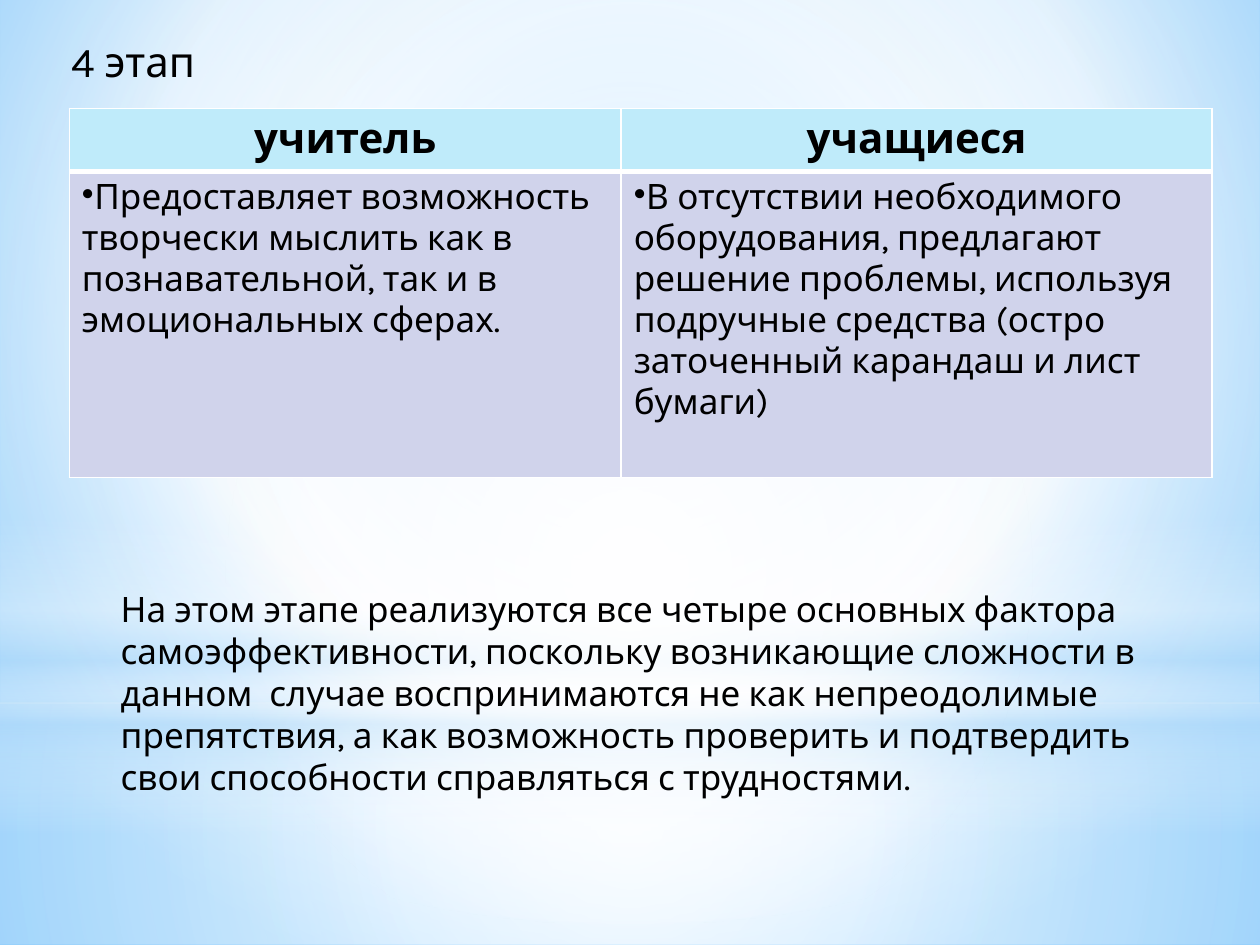
import pptx
import pptx.util
import pptx.oxml
import pptx.oxml.ns
import pptx.dml.color
import pptx.enum.shapes
import pptx.enum.text

Inches = pptx.util.Inches
Shape = pptx.enum.shapes.MSO_SHAPE
Align = pptx.enum.text.PP_ALIGN
NS = pptx.oxml.ns.nsdecls("a")
GRADIENT = pptx.oxml.ns.qn("a:gradFill")
BODY = {"size": pptx.util.Pt(20), "bold": False}
TITLE = {"size": pptx.util.Pt(24), "bold": False}
HEADER = {"size": pptx.util.Pt(24), "bold": True}
CENTRE = (50, 50, 50, 50)


def rgb(value):
    return pptx.dml.color.RGBColor.from_string(value)


def set_gradient(owner, element, stops, focus=None):
    owner.fill.gradient()
    items = "".join(
        f'<a:gs pos="{pos * 1000}"><a:srgbClr val="{color}">'
        f'<a:alpha val="{alpha * 1000}"/></a:srgbClr></a:gs>'
        for pos, color, alpha in stops)
    if focus:
        l, t, r, b = (edge * 1000 for edge in focus)
        direction = (f'<a:path path="circle"><a:fillToRect l="{l}" t="{t}" '
                     f'r="{r}" b="{b}"/></a:path>')
    else:
        direction = '<a:lin ang="5400000" scaled="0"/>'
    old = next(element.iter(GRADIENT))
    old.getparent().replace(old, pptx.oxml.parse_xml(
        f'<a:gradFill {NS} rotWithShape="1"><a:gsLst>{items}</a:gsLst>{direction}</a:gradFill>'))


def add_glow(s, kind, box, stops, focus=None):
    sp = s.shapes.add_shape(kind, *map(Inches, box))
    sp.shadow.inherit = False
    sp.line.fill.background()
    set_gradient(sp, sp._element, stops, focus)


def add_backdrop(s, width, height):
    set_gradient(s.background, s._element,
                 [(0, "9ED5FF", 100), (60, "FFFFFF", 100), (100, "5BB9FF", 100)],
                 (20, 10, 20, 60))
    horizon = 5.58
    add_glow(s, Shape.RECTANGLE, (0, horizon, width, height - horizon),
             [(0, "FFFFFF", 91), (37, "FFFFFF", 76), (100, "B4DCFA", 79)], CENTRE)
    add_glow(s, Shape.RECTANGLE, (0, 0, width, horizon),
             [(0, "FFFFFF", 89), (48, "FFFFFF", 62), (100, "B4DCFA", 79)], CENTRE)
    add_glow(s, Shape.RECTANGLE, (0, 4.12, width, 2.5),
             [(0, "FFFFFF", 0), (29, "FFFFFF", 30), (45, "B4DCFA", 40),
              (55, "FFFFFF", 26), (65, "B4DCFA", 60), (100, "FFFFFF", 0)])
    add_glow(s, Shape.OVAL, (0, 1.75, width, horizon),
             [(0, "FFFFFF", 100), (56, "FFFFFF", 0)], CENTRE)


def write(tf, text, style):
    p = tf.paragraphs[0]
    r = p.add_run()
    r.text = text
    for name, value in {"name": "Karla", **style}.items():
        setattr(r.font, name, value)
    r.font.color.rgb = rgb("000000")
    return p


def add_text(s, box, text, style):
    tf = s.shapes.add_textbox(*map(Inches, box)).text_frame
    tf.word_wrap = True
    tf.auto_size = pptx.enum.text.MSO_AUTO_SIZE.SHAPE_TO_FIT_TEXT
    write(tf, text, style)


def format_cell(cell, color, bottom):
    tcPr = cell._tc.get_or_add_tcPr()
    for side, weight in {"L": 1, "R": 1, "T": 1, "B": bottom}.items():
        tcPr.append(pptx.oxml.parse_xml(
            f'<a:ln{side} {NS} w="{pptx.util.Pt(weight)}"><a:solidFill>'
            f'<a:srgbClr val="FFFFFF"/></a:solidFill></a:ln{side}>'))
    cell.fill.solid()
    cell.fill.fore_color.rgb = rgb(color)


def add_roles_table(s, box, widths, heights, columns):
    table = s.shapes.add_table(2, len(columns), *map(Inches, box)).table
    for row, height in zip(table.rows, heights):
        row.height = Inches(height)
    for i, (role, action) in enumerate(columns):
        table.columns[i].width = Inches(widths[i])
        header, body = table.cell(0, i), table.cell(1, i)
        format_cell(header, "BFEBFA", 3)
        format_cell(body, "D0D3EB", 1)
        write(header.text_frame, role, HEADER).alignment = Align.CENTER
        pPr = write(body.text_frame, action, BODY)._p.get_or_add_pPr()
        pPr.set("marL", "0")
        pPr.set("indent", "0")
        pPr.append(pptx.oxml.parse_xml(f'<a:buChar {NS} char="•"/>'))


def main():
    prs = pptx.Presentation()
    prs.slide_width, prs.slide_height = Inches(10), Inches(7.5)
    s = prs.slides.add_slide(prs.slide_layouts[6])
    add_backdrop(s, 10, 7.5)
    add_text(s, (0.47, 0.23, 4.06, 0.5), "4 этап", TITLE)
    add_roles_table(s, (0.55, 0.86, 9.07, 2.93), (4.38, 4.69), (0.5, 2.43), [
        ("учитель",
         "Предоставляет возможность творчески мыслить как в познавательной, "
         "так и в эмоциональных сферах."),
        ("учащиеся",
         "В отсутствии необходимого оборудования, предлагают решение проблемы, "
         "используя подручные средства (остро заточенный карандаш и лист бумаги)"),
    ])
    add_text(s, (0.86, 4.61, 8.67, 1.78),
             "На этом этапе реализуются все четыре основных фактора самоэффективности, "
             "поскольку возникающие сложности в данном  случае воспринимаются не как "
             "непреодолимые препятствия, а как возможность проверить и подтвердить "
             "свои способности справляться с трудностями.", BODY)
    prs.save("out.pptx")


if __name__ == "__main__":
    main()
